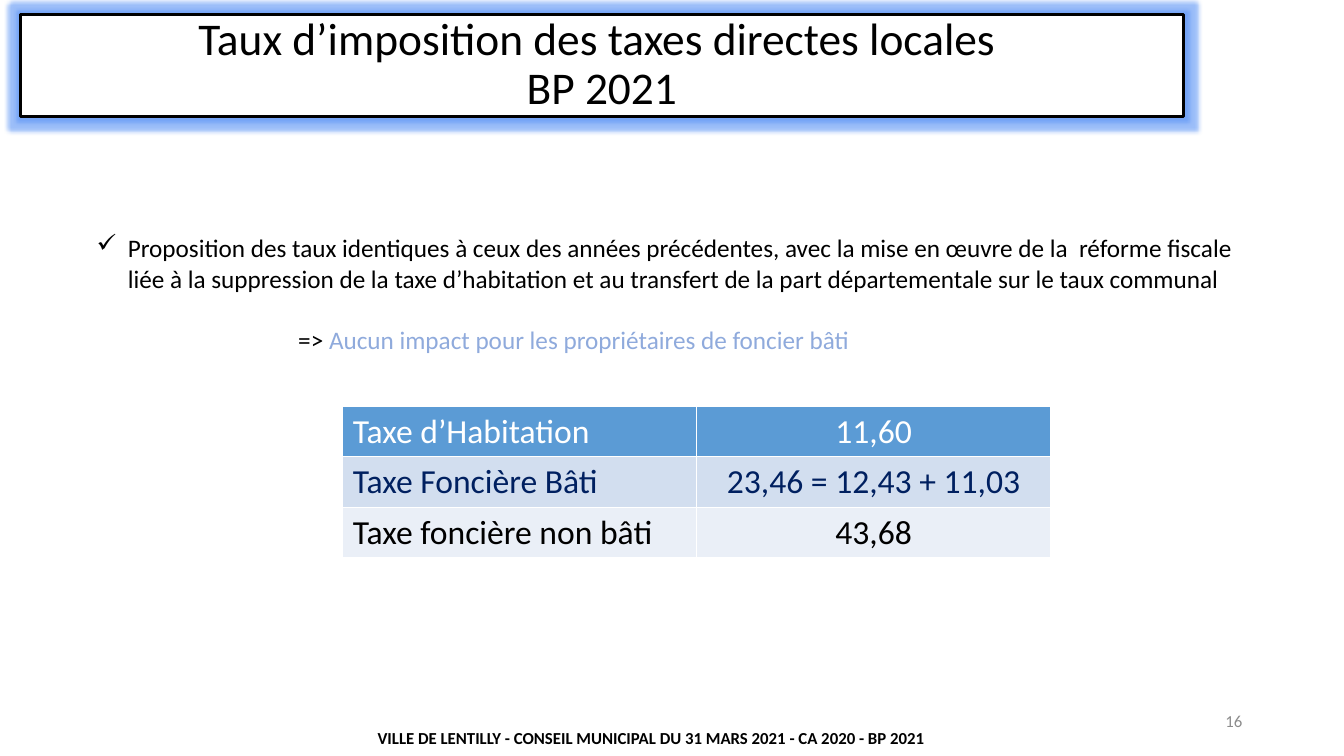
from dataclasses import dataclass

from lxml import etree
from pptx import Presentation
from pptx.dml.color import RGBColor
from pptx.enum.shapes import MSO_SHAPE
from pptx.enum.text import MSO_ANCHOR, PP_ALIGN
from pptx.oxml.ns import qn
from pptx.util import Inches, Pt

LEFT, CENTER, RIGHT = PP_ALIGN.LEFT, PP_ALIGN.CENTER, PP_ALIGN.RIGHT
MIDDLE = MSO_ANCHOR.MIDDLE
RECTANGLE = MSO_SHAPE.RECTANGLE

BLACK = RGBColor(0x00, 0x00, 0x00)
WHITE = RGBColor(0xFF, 0xFF, 0xFF)
GREY = RGBColor(0x8C, 0x8C, 0x8C)
NAVY = RGBColor(0x00, 0x20, 0x60)
LIGHT_BLUE = RGBColor(0x8F, 0xAA, 0xDC)
GLOW_BLUE = RGBColor(0x5B, 0x94, 0xF5)
HEADER_BLUE = RGBColor(0x5B, 0x9B, 0xD5)
BAND_DARK = RGBColor(0xD2, 0xDE, 0xEF)
BAND_LIGHT = RGBColor(0xEA, 0xEF, 0xF7)
FONT = "Calibri"


@dataclass(frozen=True)
class TaxRate:
    name: str
    rate: str
    fill: RGBColor
    color: RGBColor


@dataclass(frozen=True)
class FooterItem:
    text: str
    box: tuple[float, float, float, float]
    align: PP_ALIGN
    color: RGBColor
    bold: bool = False


TAX_RATES = [
    TaxRate("Taxe d’Habitation", "11,60", HEADER_BLUE, WHITE),
    TaxRate("Taxe Foncière Bâti", "23,46 = 12,43 + 11,03", BAND_DARK, NAVY),
    TaxRate("Taxe foncière non bâti", "43,68", BAND_LIGHT, BLACK),
]
FOOTER_ITEMS = [
    FooterItem("VILLE DE LENTILLY - CONSEIL MUNICIPAL DU 31 MARS 2021 - CA 2020 - BP 2021",
               (2.9, 7.18, 7.12, 0.27), CENTER, BLACK, True),
    FooterItem("16", (9.42, 6.95, 3, 0.4), RIGHT, GREY),
]


def format_runs(paragraph, size: float, color: RGBColor, bold: bool = False) -> None:
    for run in paragraph.runs:
        run.font.name = FONT
        run.font.size = Pt(size)
        run.font.bold = bold
        run.font.color.rgb = color


def add_glow(shape, color: RGBColor, radius: int) -> None:
    effects = shape._element.spPr.find(qn("a:effectLst"))
    glow = etree.SubElement(effects, qn("a:glow"), rad=str(radius))
    glow_color = etree.SubElement(glow, qn("a:srgbClr"), val=str(color))
    etree.SubElement(glow_color, qn("a:alpha"), val="60000")


def add_cell_borders(cell, color: RGBColor, width: int) -> None:
    properties = cell._tc.get_or_add_tcPr()
    for side in ("lnL", "lnR", "lnT", "lnB"):
        line = etree.SubElement(properties, qn(f"a:{side}"), w=str(width))
        fill = etree.SubElement(line, qn("a:solidFill"))
        etree.SubElement(fill, qn("a:srgbClr"), val=str(color))


def add_title(slide) -> None:
    title = slide.shapes.add_shape(
        RECTANGLE, Inches(0.2), Inches(0.14), Inches(11.54), Inches(1.02))
    title.shadow.inherit = False
    add_glow(title, GLOW_BLUE, Pt(6))
    title.fill.solid()
    title.fill.fore_color.rgb = WHITE
    title.line.color.rgb = BLACK
    title.line.width = Pt(2.25)
    title.text_frame.vertical_anchor = MIDDLE
    paragraph = title.text_frame.paragraphs[0]
    paragraph.text = "Taux d’imposition des taxes directes locales \vBP 2021"
    paragraph.alignment = CENTER
    paragraph.line_spacing = 0.9
    format_runs(paragraph, 32.4, BLACK)


def add_proposal(slide) -> None:
    box = slide.shapes.add_textbox(
        Inches(0.86), Inches(2.26), Inches(11.73), Inches(1.31))
    frame = box.text_frame
    frame.word_wrap = True
    proposal = frame.paragraphs[0]
    proposal.text = (
        "Proposition des taux identiques à ceux des années précédentes, avec la mise en "
        "œuvre de la  réforme fiscale liée à la suppression de la taxe d’habitation et au "
        "transfert de la part départementale sur le taux communal")
    format_runs(proposal, 18, BLACK)
    properties = proposal._p.get_or_add_pPr()
    properties.set("marL", str(Inches(0.31)))
    properties.set("indent", str(-Inches(0.31)))
    etree.SubElement(properties, qn("a:buChar"), char="✓")

    impact = frame.add_paragraph()
    impact.text = "=> "
    impact.add_run().text = "Aucun impact pour les propriétaires de foncier bâti"
    impact.space_before = Pt(22)
    impact._p.get_or_add_pPr().set("marL", str(Inches(2)))
    format_runs(impact, 18, BLACK)
    impact.runs[1].font.color.rgb = LIGHT_BLUE


def add_rate_table(slide, rates: list[TaxRate]) -> None:
    table = slide.shapes.add_table(
        len(rates), 2, Inches(3.4), Inches(4.03), Inches(7.02), Inches(1.5)).table
    for row, rate in enumerate(rates):
        for column, (text, align) in enumerate([(rate.name, LEFT), (rate.rate, CENTER)]):
            cell = table.cell(row, column)
            add_cell_borders(cell, WHITE, Pt(1))
            cell.fill.solid()
            cell.fill.fore_color.rgb = rate.fill
            paragraph = cell.text_frame.paragraphs[0]
            paragraph.text = text
            paragraph.alignment = align
            format_runs(paragraph, 24, rate.color)


def add_footer_item(slide, item: FooterItem) -> None:
    box = slide.shapes.add_textbox(*(Inches(length) for length in item.box))
    frame = box.text_frame
    frame.word_wrap = True
    frame.vertical_anchor = MIDDLE
    paragraph = frame.paragraphs[0]
    paragraph.text = item.text
    paragraph.alignment = item.align
    format_runs(paragraph, 12, item.color, item.bold)


def main() -> None:
    presentation = Presentation()
    presentation.slide_width = Inches(13.33)
    presentation.slide_height = Inches(7.5)
    slide = presentation.slides.add_slide(presentation.slide_layouts[6])
    for item in FOOTER_ITEMS:
        add_footer_item(slide, item)
    add_title(slide)
    add_rate_table(slide, TAX_RATES)
    add_proposal(slide)
    presentation.save("out.pptx")


if __name__ == "__main__":
    main()
